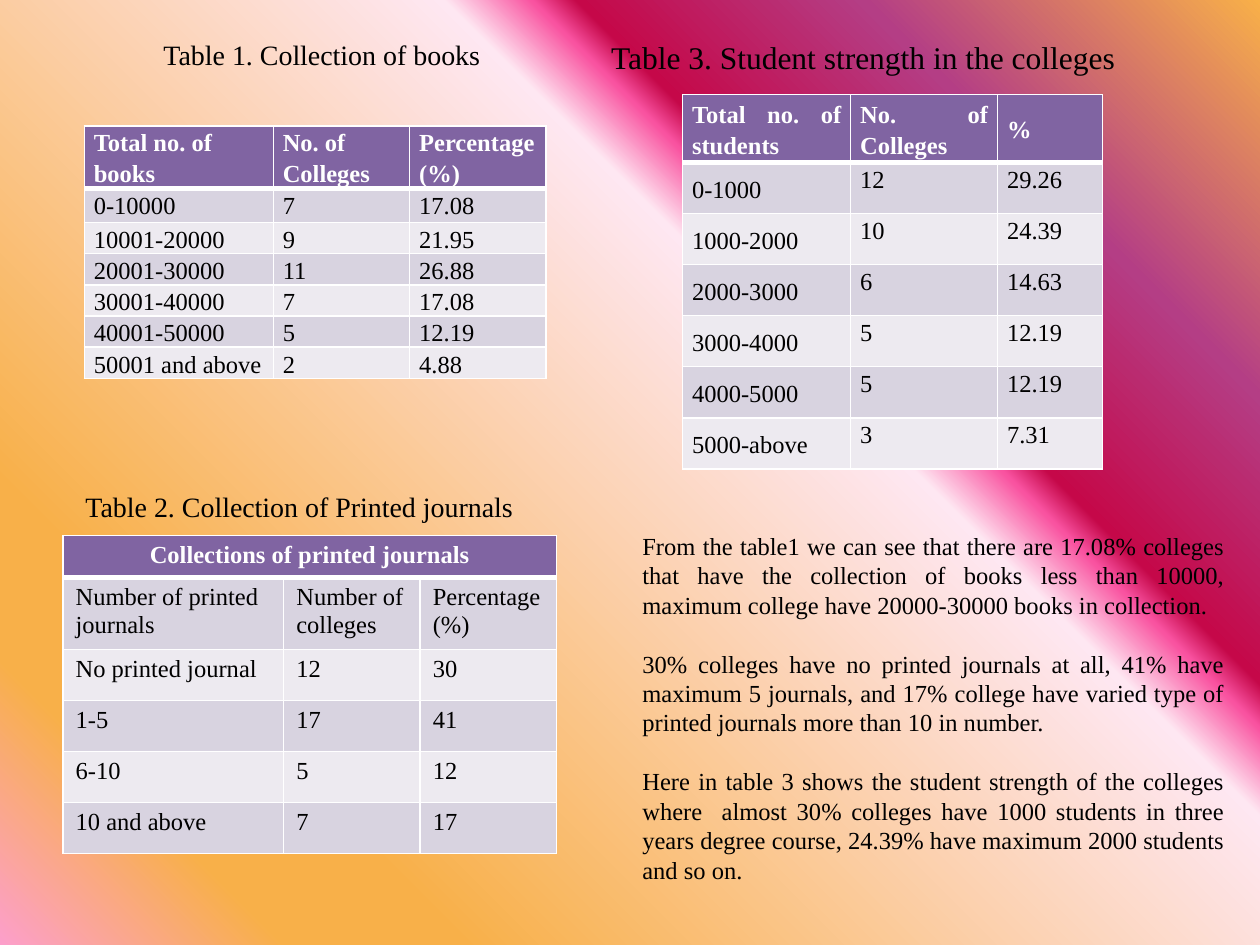
from dataclasses import dataclass

from lxml import etree
from pptx import Presentation
from pptx import util as u
from pptx.dml.color import RGBColor
from pptx.enum import text
from pptx.oxml import ns


@dataclass(frozen=True)
class Theme:
    font: str = "Times New Roman"
    ink: str = "000000"
    white: str = "FFFFFF"
    header: str = "8064A2"
    bands: tuple = ("D8D3E0", "EDEAF0")
    body_size: int = 14
    caption_size: int = 16
    large_caption_size: int = 18
    thin: int = 1
    thick: int = 3
    gradient: tuple = (
        (0, "FC9FCB"), (13, "F8B049"), (21, "F8B049"), (63, "FEE7F2"),
        (67, "F952A0"), (69, "C50849"), (82, "B43E85"), (100, "F8B049"),
    )


THEME = Theme()
LEFT = text.PP_ALIGN.LEFT
CENTER = text.PP_ALIGN.CENTER
JUSTIFY = text.PP_ALIGN.JUSTIFY

BOOKS = [
    ("Total no. of books", "No. of Colleges", "Percentage\n(%)"),
    ("0-10000", "7", "17.08"),
    ("10001-20000", "9", "21.95"),
    ("20001-30000", "11", "26.88"),
    ("30001-40000", "7", "17.08"),
    ("40001-50000", "5", "12.19"),
    ("50001 and above", "2", "4.88"),
]
JOURNALS = [
    ("Collections of printed journals", "", ""),
    ("Number of printed journals", "Number of colleges", "Percentage\n(%)"),
    ("No printed journal", "12", "30"),
    ("1-5", "17", "41"),
    ("6-10", "5", "12"),
    ("10 and above", "7", "17"),
]
STUDENTS = [
    ("Total no. of students", "No. of Colleges", "%"),
    ("0-1000", "12", "29.26"),
    ("1000-2000", "10", "24.39"),
    ("2000-3000", "6", "14.63"),
    ("3000-4000", "5", "12.19"),
    ("4000-5000", "5", "12.19"),
    ("5000-above", "3", "7.31"),
]
FINDINGS = [
    "From the table1 we can see that there are 17.08% colleges that have the "
    "collection of books less than 10000, maximum college have 20000-30000 "
    "books in collection.",
    "30% colleges have no printed journals at all, 41% have maximum 5 "
    "journals, and 17% college have varied type of printed journals more "
    "than 10 in number.",
    "Here in table 3 shows the student strength of the colleges where  almost "
    "30% colleges have 1000 students in three years degree course, 24.39% "
    "have maximum 2000 students and so on.",
]


def add_color(parent, color):
    etree.SubElement(parent, ns.qn("a:srgbClr"), val=color)


def paint_background(slide):
    fill = slide.background.fill
    fill.gradient()
    fill.gradient_angle = 45
    stops = fill.gradient_stops
    stop_list = slide.background._cSld.find(".//" + ns.qn("a:gsLst"))
    for old_stop in list(stop_list):
        stop_list.remove(old_stop)
    for percent, color in THEME.gradient:
        add_color(etree.SubElement(stop_list, ns.qn("a:gs"), pos=str(percent * 1000)), color)


def style_paragraph(paragraph, size, color, alignment, bold=False):
    paragraph.alignment = alignment
    paragraph.font.name = THEME.font
    paragraph.font.size = u.Pt(size)
    paragraph.font.bold = bold
    paragraph.font.color.rgb = RGBColor.from_string(color)


def add_text(slide, box, paragraphs, size, alignment, gap=0):
    shape = slide.shapes.add_textbox(*map(u.Cm, box))
    frame = shape.text_frame
    frame.word_wrap = True
    frame.auto_size = text.MSO_AUTO_SIZE.SHAPE_TO_FIT_TEXT
    frame.text = "\n".join(paragraphs)
    for paragraph in frame.paragraphs:
        style_paragraph(paragraph, size, THEME.ink, alignment)
    for paragraph in frame.paragraphs[:-1]:
        paragraph.space_after = u.Pt(gap)


def set_borders(cell, top, bottom):
    properties = cell._tc.get_or_add_tcPr()
    widths = {"L": THEME.thin, "R": THEME.thin, "T": top, "B": bottom}
    for side, width in widths.items():
        line = etree.SubElement(properties, ns.qn("a:ln" + side), w=str(u.Pt(width)))
        add_color(etree.SubElement(line, ns.qn("a:solidFill")), THEME.white)


def style_cell(cell, row, alignment, spacing):
    header = row == 0
    set_borders(cell,
                top=THEME.thick if row == 1 else THEME.thin,
                bottom=THEME.thick if header else THEME.thin)
    cell.fill.solid()
    color = THEME.header if header else THEME.bands[(row - 1) % 2]
    cell.fill.fore_color.rgb = RGBColor.from_string(color)
    for paragraph in cell.text_frame.paragraphs:
        style_paragraph(paragraph, THEME.body_size,
                        THEME.white if header else THEME.ink, alignment, header)
        if spacing:
            paragraph.line_spacing = spacing


def add_table(slide, left, top, widths, heights, rows,
              alignment=LEFT, spacing=None, tight=False):
    shape = slide.shapes.add_table(
        len(rows), len(widths), u.Cm(left), u.Cm(top),
        u.Cm(sum(widths)), u.Cm(sum(heights)))
    table = shape.table
    for column, width in zip(table.columns, widths):
        column.width = u.Cm(width)
    for row, height in zip(table.rows, heights):
        row.height = u.Cm(height)
    for row, values in enumerate(rows):
        for column, value in enumerate(values):
            cell = table.cell(row, column)
            cell.text = value
            if tight:
                cell.margin_left = cell.margin_right = u.Cm(0.19)
                cell.margin_top = cell.margin_bottom = 0
            style_cell(cell, row, alignment, spacing)
    return table


def main():
    presentation = Presentation()
    presentation.slide_width, presentation.slide_height = u.Cm(25.4), u.Cm(19.05)
    slide = presentation.slides.add_slide(presentation.slide_layouts[6])
    paint_background(slide)

    # Books
    add_table(slide, 1.7, 2.54, (3.81, 2.75, 2.75),
              (1.02, 0.69, 0.63, 0.63, 0.62, 0.62, 0.63), BOOKS,
              spacing=1.15, tight=True)

    # Findings
    add_text(slide, (12.7, 10.58, 12.24, 8.64), FINDINGS,
             THEME.body_size, JUSTIFY, gap=16.8)
    add_text(slide, (0.42, 0.64, 12.28, 0.94), ["Table 1. Collection of books "],
             THEME.caption_size, CENTER)

    # Printed journals, under one merged heading
    journals = add_table(slide, 1.27, 10.8, (4.45, 2.75, 2.75),
                         [0.41] + [1.03] * 5, JOURNALS)
    journals.cell(0, 0).merge(journals.cell(0, 2))
    journals.cell(0, 0).text_frame.paragraphs[0].alignment = CENTER
    add_text(slide, (1.27, 9.74, 9.53, 0.94),
             ["Table 2. Collection of Printed journals"], THEME.caption_size, CENTER)

    # Student strength
    students = add_table(slide, 13.76, 1.91, (3.39, 2.96, 2.12), [1.03] * 7,
                         STUDENTS, alignment=JUSTIFY, spacing=1.15, tight=True)
    centred = [students.cell(0, column) for column in range(3)]
    centred += [students.cell(row, 0) for row in range(1, len(STUDENTS))]
    for cell in centred:
        cell.vertical_anchor = text.MSO_ANCHOR.MIDDLE
    add_text(slide, (12.07, 0.64, 12.7, 1.02),
             ["Table 3. Student strength in the colleges"],
             THEME.large_caption_size, LEFT)

    presentation.save("out.pptx")


if __name__ == "__main__":
    main()
